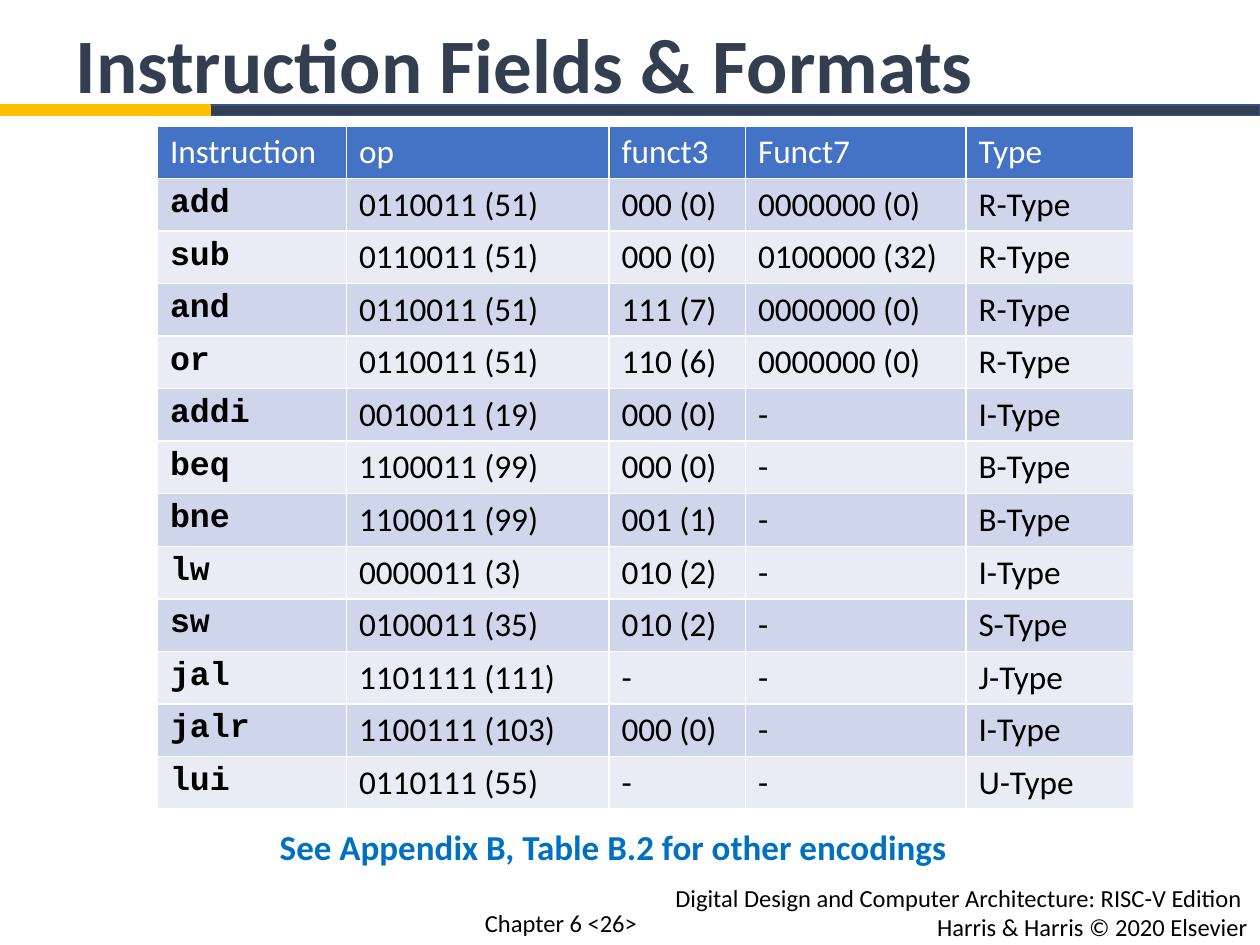
from lxml import etree
from pptx import Presentation
from pptx.dml.color import RGBColor
from pptx.enum import shapes, text
from pptx.oxml import ns
from pptx.util import Pt

COLORS = {
    "white": "FFFFFF", "black": "000000", "navy": "333F50", "navy_edge": "325491",
    "gold": "FFC000", "header": "4472C4", "band_dark": "CFD5EA",
    "band_light": "E9EBF5", "link_blue": "0070C0",
}
COLUMN_WIDTHS = [108, 150, 78, 126, 96]
ROW_HEIGHT = 30
INSTRUCTIONS = [
    ("Instruction", "op", "funct3", "Funct7", "Type"),
    ("add", "0110011 (51)", "000 (0)", "0000000 (0)", "R-Type"),
    ("sub", "0110011 (51)", "000 (0)", "0100000 (32)", "R-Type"),
    ("and", "0110011 (51)", "111 (7)", "0000000 (0)", "R-Type"),
    ("or", "0110011 (51)", "110 (6)", "0000000 (0)", "R-Type"),
    ("addi", "0010011 (19)", "000 (0)", "-", "I-Type"),
    ("beq", "1100011 (99)", "000 (0)", "-", "B-Type"),
    ("bne", "1100011 (99)", "001 (1)", "-", "B-Type"),
    ("lw", "0000011 (3)", "010 (2)", "-", "I-Type"),
    ("sw", "0100011 (35)", "010 (2)", "-", "S-Type"),
    ("jal", "1101111 (111)", "-", "-", "J-Type"),
    ("jalr", "1100111 (103)", "000 (0)", "-", "I-Type"),
    ("lui", "0110111 (55)", "-", "-", "U-Type"),
]


def format_runs(frame, size, color, bold=False, font="Calibri"):
    for paragraph in frame.paragraphs:
        for run in paragraph.runs:
            run.font.name = font
            run.font.size = Pt(size)
            run.font.bold = bold
            run.font.color.rgb = RGBColor.from_string(COLORS[color])


def add_label(box, wording, size, color, bold=False, wrap=True):
    """Add a text box at box (left, top, width, height) and return its frame."""
    frame = slide.shapes.add_textbox(*map(Pt, box)).text_frame
    frame.text = wording
    frame.word_wrap = wrap
    format_runs(frame, size, color, bold)
    return frame


prs = Presentation()
prs.slide_width, prs.slide_height = Pt(720), Pt(540)
slide = prs.slides.add_slide(prs.slide_layouts[6])

# Footer panel and the two-colour rule under the title
for left, top, width, height, fill, edge in [
    (0, 462, 720, 78, "white", "white"),
    (120, 60, 600, 6, "navy", "navy_edge"),
    (0, 60, 120, 6, "gold", "gold"),
]:
    bar = slide.shapes.add_shape(
        shapes.MSO_SHAPE.RECTANGLE, Pt(left), Pt(top), Pt(width), Pt(height))
    bar.shadow.inherit = False
    bar.fill.solid()
    bar.fill.fore_color.rgb = RGBColor.from_string(COLORS[fill])
    bar.line.color.rgb = RGBColor.from_string(COLORS[edge])
    bar.line.width = Pt(1)

credit = add_label(
    (270, 501, 450, 41),
    "Digital Design and Computer Architecture: RISC-V Edition \n"
    "Harris & Harris © 2020 Elsevier", 14, "black")
for paragraph in credit.paragraphs:
    paragraph.alignment = text.PP_ALIGN.RIGHT
add_label((270, 515.5, 114, 24.5), "Chapter 6 <26>", 14, "black")

title = add_label((0, 5.76, 624, 60.5), "Instruction Fields & Formats", 44, "navy", bold=True)
title.margin_left = Pt(43.2)

# Instruction table
table = slide.shapes.add_table(
    len(INSTRUCTIONS), len(COLUMN_WIDTHS), Pt(90), Pt(72),
    Pt(sum(COLUMN_WIDTHS)), Pt(ROW_HEIGHT * len(INSTRUCTIONS))).table
for column, width in zip(table.columns, COLUMN_WIDTHS):
    column.width = Pt(width)

for row, fields in enumerate(INSTRUCTIONS):
    table.rows[row].height = Pt(ROW_HEIGHT)
    is_header = row == 0
    band = "header" if is_header else "band_dark" if row % 2 else "band_light"
    for col, field in enumerate(fields):
        cell = table.cell(row, col)
        cell.text_frame.text = field
        is_mnemonic = col == 0 and not is_header
        format_runs(cell.text_frame, 19, "white" if is_header else "black",
                    is_mnemonic, "Courier New" if is_mnemonic else "Calibri")
        properties = cell._tc.get_or_add_tcPr()
        for side in ("lnL", "lnR", "lnT", "lnB"):
            border = etree.SubElement(properties, ns.qn("a:" + side), w=str(Pt(1)))
            line_fill = etree.SubElement(border, ns.qn("a:solidFill"))
            etree.SubElement(line_fill, ns.qn("a:srgbClr"), val=COLORS["white"])
        cell.fill.solid()
        cell.fill.fore_color.rgb = RGBColor.from_string(COLORS[band])

add_label((152.8, 468, 399, 31.5), "See Appendix B, Table B.2 for other encodings",
          20, "link_blue", bold=True, wrap=False)

prs.save("out.pptx")
